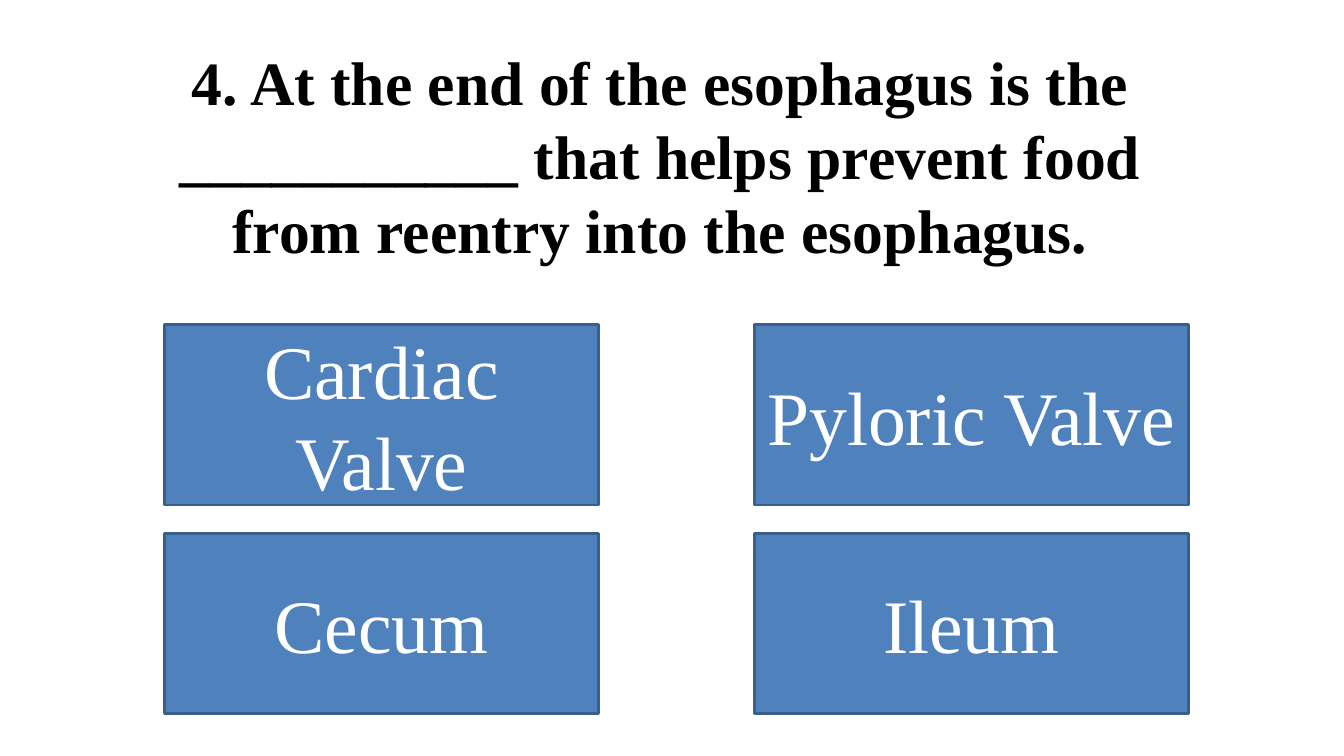
from pptx import Presentation
from pptx.dml.color import RGBColor
from pptx.enum.shapes import MSO_SHAPE
from pptx.enum.text import MSO_ANCHOR, PP_ALIGN
from pptx.util import Inches, Pt

QUESTION = (
    "4. At the end of the esophagus is the ___________ "
    "that helps prevent food from reentry into the esophagus."
)
ANSWERS = [
    ["Cardiac Valve", "Pyloric Valve"],
    ["Cecum", "Ileum"],
]

FONT = "Times New Roman"
BLACK = RGBColor(0x00, 0x00, 0x00)
WHITE = RGBColor(0xFF, 0xFF, 0xFF)
BLUE = RGBColor(0x4F, 0x81, 0xBD)
DARK_BLUE = RGBColor(0x3A, 0x5F, 0x8C)
RECTANGLE = MSO_SHAPE.RECTANGLE
MIDDLE = MSO_ANCHOR.MIDDLE
CENTER = PP_ALIGN.CENTER

GRID_LEFT, GRID_TOP = 1.63, 3.22
COLUMN_STEP, ROW_STEP = 5.85, 2.07
ANSWER_WIDTH, ANSWER_HEIGHT = 4.31, 1.79


def write(holder, text, size, color, bold=False):
    frame = holder.text_frame
    frame.text = text
    frame.word_wrap = True
    frame.vertical_anchor = MIDDLE
    paragraph = frame.paragraphs[0]
    paragraph.alignment = CENTER
    font = paragraph.runs[0].font
    font.name = FONT
    font.size = Pt(size)
    font.bold = bold
    font.color.rgb = color


def add_answer(slide, text, row, column):
    answer = slide.shapes.add_shape(
        RECTANGLE,
        Inches(GRID_LEFT + column * COLUMN_STEP),
        Inches(GRID_TOP + row * ROW_STEP),
        Inches(ANSWER_WIDTH),
        Inches(ANSWER_HEIGHT),
    )
    answer.shadow.inherit = False
    answer.fill.solid()
    answer.fill.fore_color.rgb = BLUE
    answer.line.color.rgb = DARK_BLUE
    answer.line.width = Pt(2)
    write(answer, text, 54, WHITE)


def main():
    deck = Presentation()
    deck.slide_width, deck.slide_height = Inches(13.33), Inches(7.5)
    slide = deck.slides.add_slide(deck.slide_layouts[6])

    question = slide.shapes.add_textbox(
        Inches(1.3), Inches(0.44), Inches(10.5), Inches(2.2)
    )
    write(question, QUESTION, 44, BLACK, bold=True)

    for row, answers in enumerate(ANSWERS):
        for column, text in enumerate(answers):
            add_answer(slide, text, row, column)

    deck.save("out.pptx")


if __name__ == "__main__":
    main()
